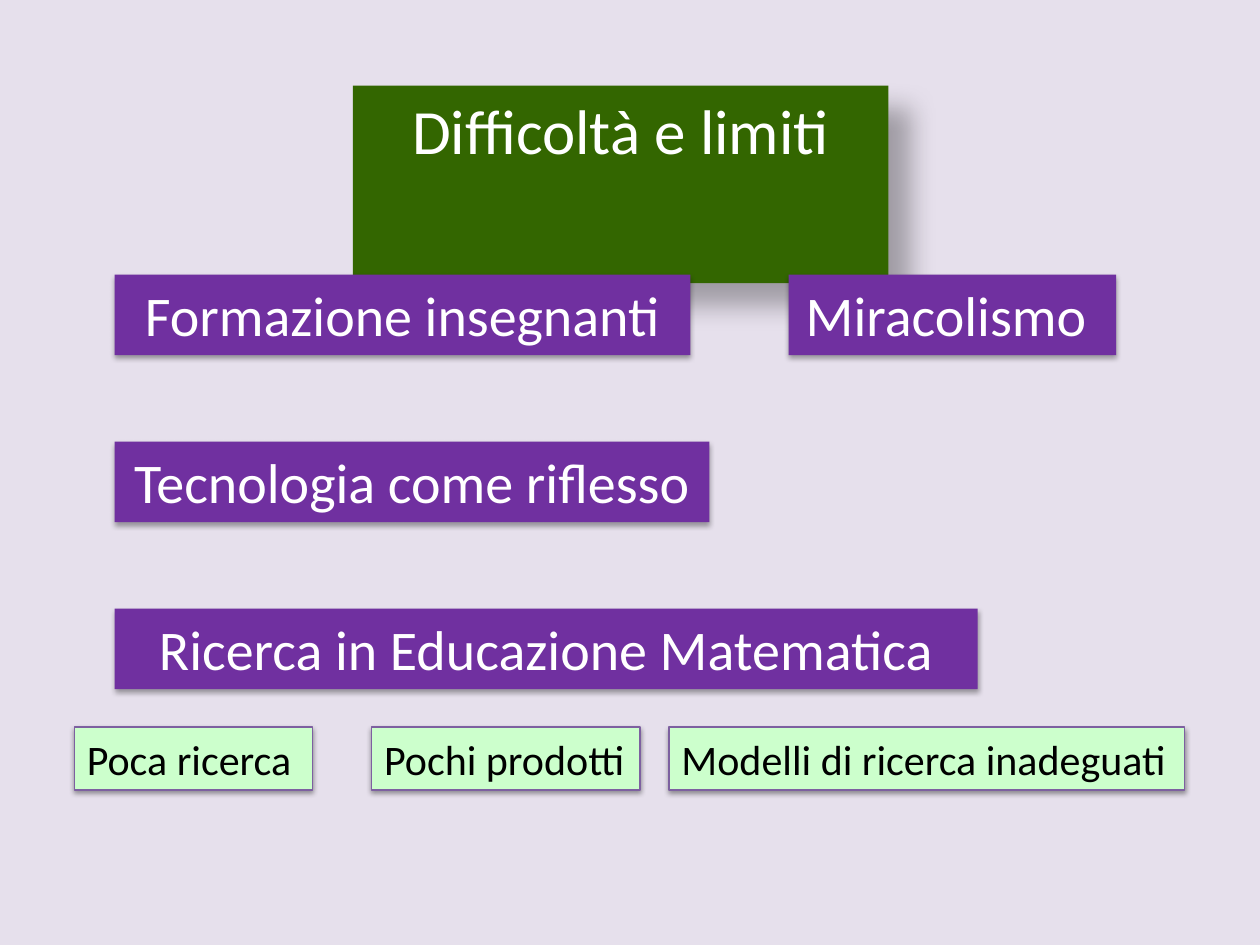
from dataclasses import dataclass

from lxml.etree import SubElement
from pptx import Presentation
from pptx.dml.color import RGBColor
from pptx.enum.shapes import MSO_SHAPE
from pptx.enum.text import MSO_ANCHOR, MSO_AUTO_SIZE, PP_ALIGN
from pptx.oxml.ns import qn
from pptx.util import Inches, Pt

TITLE = "Difficoltà e limiti"
# text, column, row, width
LIMITS = [
    ("Formazione insegnanti", 0, 0, 4.57),
    ("Miracolismo ", 1, 0, 2.6),
    ("Tecnologia come riflesso", 0, 1, 4.72),
    ("Ricerca in Educazione Matematica", 0, 2, 6.85),
]
# text, width
RESEARCH_ISSUES = [
    ("Poca ricerca", 1.89),
    ("Pochi prodotti", 2.13),
    ("Modelli di ricerca inadeguati", 4.09),
]

LIMIT_COLUMNS = (0.91, 6.26)
LIMIT_TOP, LIMIT_BOTTOM = 2.18, 4.83
LIMIT_STEP = (LIMIT_BOTTOM - LIMIT_TOP) / 2
ISSUE_LEFT, ISSUE_TOP, ISSUE_STEP = 0.59, 5.77, 2.36


@dataclass
class Style:
    fill: str
    color: str
    size: int
    height: float
    align: PP_ALIGN
    shadow: tuple  # opacity %, blur pt, distance pt, angle in degrees
    line: str = ""


THEME = {
    "font": "Calibri",
    "background": "E6E0EC",
    "title": Style("336600", "FFFFFF", 36, 0.71, PP_ALIGN.CENTER, (30, 15, 18, 45)),
    "limit": Style("7030A0", "FFFFFF", 32, 0.64, PP_ALIGN.CENTER, (35, 3.1, 1.8, 90)),
    "issue": Style("CCFFCC", "000000", 24, 0.5, PP_ALIGN.LEFT, (38, 3.1, 1.6, 90), "7D60A0"),
}


def paint(fill, color):
    fill.solid()
    fill.fore_color.rgb = RGBColor.from_string(color)


def add_shadow(sp, opacity, blur, distance, angle):
    sp.shadow.inherit = False
    effects = sp._element.spPr.find(qn("a:effectLst"))
    shadow = SubElement(effects, qn("a:outerShdw"), blurRad=str(Pt(blur)),
                        dist=str(Pt(distance)), dir=str(angle * 60000),
                        algn="tl", rotWithShape="0")
    color = SubElement(shadow, qn("a:srgbClr"), val="000000")
    SubElement(color, qn("a:alpha"), val=str(opacity * 1000))


def format_box(sp, text, left, top, width, style):
    sp.left, sp.top = Inches(left), Inches(top)
    sp.width, sp.height = Inches(width), Inches(style.height)
    paint(sp.fill, style.fill)
    if style.line:
        paint(sp.line.fill, style.line)
        sp.line.width = Pt(0.75)
    else:
        sp.line.fill.background()
    add_shadow(sp, *style.shadow)

    tf = sp.text_frame
    tf.word_wrap = True
    tf.auto_size = MSO_AUTO_SIZE.SHAPE_TO_FIT_TEXT
    tf.vertical_anchor = MSO_ANCHOR.TOP
    p = tf.paragraphs[0]
    p.alignment = style.align
    r = p.add_run()
    r.text = text
    r.font.name = THEME["font"]
    r.font.size = Pt(style.size)
    r.font.color.rgb = RGBColor.from_string(style.color)


def add_box(s, text, left, top, width, style):
    sp = s.shapes.add_shape(MSO_SHAPE.RECTANGLE, 0, 0, 0, 0)
    format_box(sp, text, left, top, width, style)


def main():
    prs = Presentation()
    prs.slide_width, prs.slide_height = Inches(10), Inches(7.5)
    s = prs.slides.add_slide(prs.slide_layouts[5])
    paint(s.background.fill, THEME["background"])

    format_box(s.shapes.title, TITLE, 2.8, 0.68, 4.25, THEME["title"])
    for text, column, row, width in LIMITS:
        add_box(s, text, LIMIT_COLUMNS[column], LIMIT_TOP + row * LIMIT_STEP,
                width, THEME["limit"])
    for i, (text, width) in enumerate(RESEARCH_ISSUES):
        add_box(s, text, ISSUE_LEFT + i * ISSUE_STEP, ISSUE_TOP, width, THEME["issue"])

    prs.save("out.pptx")


if __name__ == "__main__":
    main()
